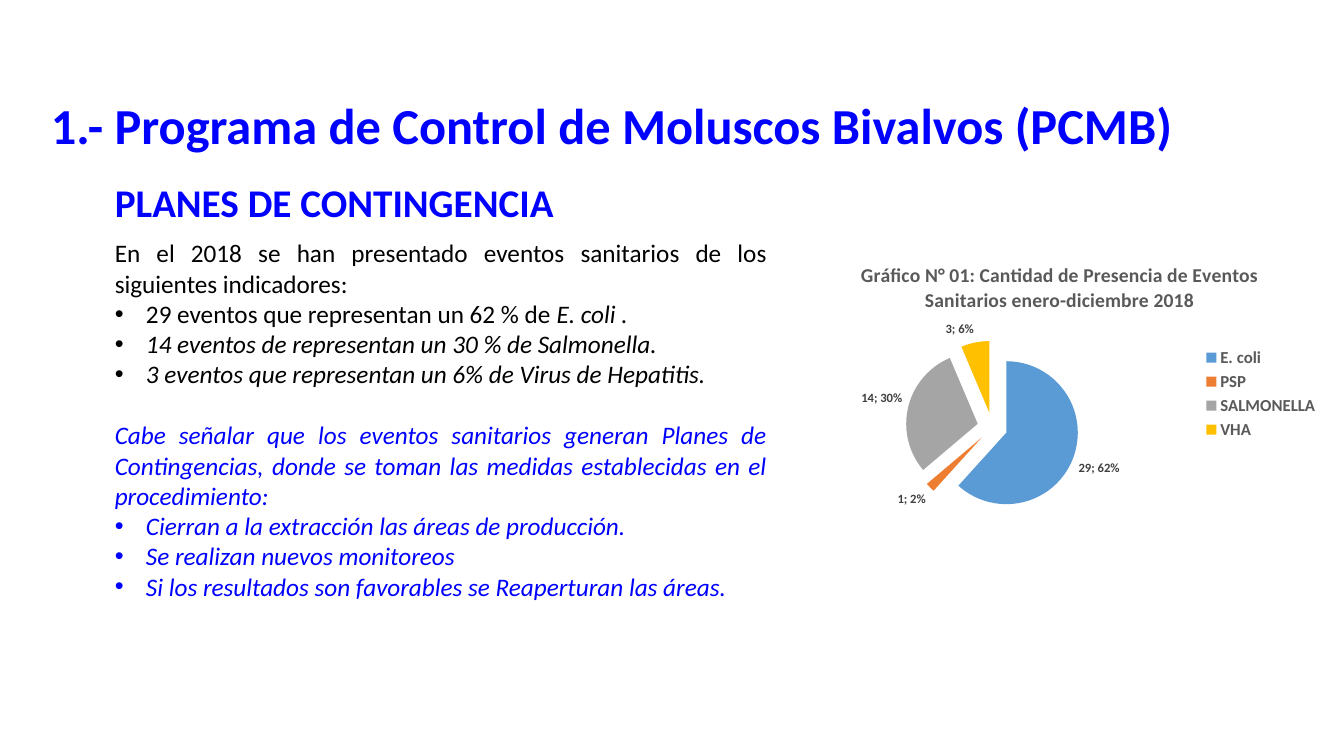
import pptx
import pptx.util
import pptx.dml.color
import pptx.enum.text
import pptx.enum.chart
import pptx.chart.data
import pptx.oxml
from pptx.oxml.ns import qn

Pt = pptx.util.Pt
Inches = pptx.util.Inches
ALIGN = pptx.enum.text.PP_ALIGN
FIT = pptx.enum.text.MSO_AUTO_SIZE
NS = 'xmlns:c="http://schemas.openxmlformats.org/drawingml/2006/chart"'
COLORS = {
    "blue": "0000FF", "black": "000000", "grey": "595959", "label": "404040",
    "pie": ["5B9BD5", "ED7D31", "A5A5A5", "FFC000"],
}


class Deck:
    """Holds the style and the current slide; boxes are percent of its size."""
    face = "Calibri"

    def __init__(self):
        self.prs = pptx.Presentation()
        self.prs.slide_width = Inches(13.33)
        self.prs.slide_height = Inches(7.5)
        self.slide = self.prs.slides.add_slide(self.prs.slide_layouts[1])

    def scale(self, box):
        wide, high = self.prs.slide_width, self.prs.slide_height
        return [int(part * side / 100)
                for part, side in zip(box, (wide, high, wide, high))]

    def style(self, font, size, color, bold=False, slant=False):
        font.name, font.size = self.face, Pt(size)
        font.bold, font.italic = bold, slant
        font.color.rgb = pptx.dml.color.RGBColor.from_string(color)

    def holder(self, idx, box, text, size, align, gap=0):
        shape = self.slide.placeholders[idx]
        shape.left, shape.top, shape.width, shape.height = self.scale(box)
        frame = shape.text_frame
        frame.auto_size = FIT.NONE
        frame.vertical_anchor = pptx.enum.text.MSO_ANCHOR.TOP
        para = frame.paragraphs[0]
        self.mark(para, False)
        para.alignment, para.line_spacing = align, 0.9
        para.space_before = Pt(gap)
        run = para.add_run()
        run.text = text
        self.style(run.font, size, COLORS["blue"], bold=True)

    def mark(self, para, dot):
        props = para._p.get_or_add_pPr()
        inset = Inches(0.31) if dot else 0
        props.set("marL", str(inset))
        props.set("indent", str(-inset))
        kind = props.makeelement(qn("a:buChar" if dot else "a:buNone"), {})
        if dot:
            font = props.makeelement(qn("a:buFont"), {"typeface": "Arial"})
            props.append(font)
            kind.set("char", "•")
        props.append(kind)

    def prose(self, box, paras, size):
        frame = self.slide.shapes.add_textbox(*self.scale(box)).text_frame
        frame.word_wrap = True
        frame.auto_size = FIT.SHAPE_TO_FIT_TEXT
        for i, (dot, gap, color, runs) in enumerate(paras):
            para = frame.add_paragraph() if i else frame.paragraphs[0]
            self.mark(para, dot)
            para.alignment = ALIGN.JUSTIFY
            para.space_before = Pt(gap)
            for text, slant in runs:
                run = para.add_run()
                run.text = text
                self.style(run.font, size, COLORS[color], slant=slant)

    def pie(self, box, title, names, vals, area, burst):
        data = pptx.chart.data.CategoryChartData()
        data.categories = names
        data.add_series("Eventos", vals)
        chart = self.slide.shapes.add_chart(
            pptx.enum.chart.XL_CHART_TYPE.PIE, *self.scale(box), data).chart
        self.style(chart.font, 10, COLORS["black"])

        # Title and legend
        chart.has_title = True
        run = chart.chart_title.text_frame.paragraphs[0].add_run()
        run.text = title
        self.style(run.font, 14, COLORS["grey"], bold=True)
        chart.has_legend = True
        chart.legend.position = pptx.enum.chart.XL_LEGEND_POSITION.RIGHT
        chart.legend.include_in_layout = False
        self.style(chart.legend.font, 12, COLORS["grey"], bold=True)

        # Slices, pulled apart
        plot = chart.plots[0]
        plot.vary_by_categories = True
        series = plot.series[0]
        for i, color in enumerate(COLORS["pie"]):
            fill = series.points[i].format.fill
            fill.solid()
            fill.fore_color.rgb = pptx.dml.color.RGBColor.from_string(color)
        series._element.find(qn("c:dPt")).addprevious(
            pptx.oxml.parse_xml(f'<c:explosion {NS} val="{burst}"/>'))

        # Value and share on each slice
        labels = series.data_labels
        labels.show_value = labels.show_percentage = True
        labels.position = pptx.enum.chart.XL_LABEL_POSITION.OUTSIDE_END
        self.style(labels.font, 9, COLORS["label"], bold=True)
        labels._element.find(qn("c:showBubbleSize")).addnext(
            pptx.oxml.parse_xml(f"<c:separator {NS}>; </c:separator>"))

        # Plot area
        zone = chart._chartSpace.find(".//" + qn("c:plotArea"))
        for old in zone.findall(qn("c:layout")):
            zone.remove(old)
        sides = "".join(f'<c:{key} val="{val}"/>' for key, val in zip(
            ("layoutTarget", "xMode", "yMode", "x", "y", "w", "h"),
            ("inner", "edge", "edge", *area)))
        zone.insert(0, pptx.oxml.parse_xml(
            f"<c:layout {NS}><c:manualLayout>{sides}"
            "</c:manualLayout></c:layout>"))


def main():
    deck = Deck()

    # Headings
    deck.holder(0, (2.4, 12.67, 86.25, 15.6),
                "1.- Programa de Control de Moluscos Bivalvos (PCMB)",
                36, ALIGN.CENTER)
    deck.holder(1, (7.8, 23.6, 86.25, 63.47), "PLANES DE CONTINGENCIA",
                28, ALIGN.LEFT)

    # Findings and measures: bullet, space before, colour, runs
    deck.prose((7.8, 30.8, 50, 49.87), [
        (False, 0, "black", [("En el 2018 se han presentado eventos sanitarios "
                              "de los siguientes indicadores:", False)]),
        (True, 0, "black", [("29 eventos que representan un 62 % de ", False),
                            ("E. coli .", True)]),
        (True, 0, "black",
         [("14 eventos de representan un 30 % de Salmonella.", True)]),
        (True, 0, "black",
         [("3 eventos que representan un 6% de Virus de Hepatitis.", True)]),
        (False, 22, "blue",
         [("Cabe señalar que los eventos sanitarios generan Planes de "
           "Contingencias, donde se toman las medidas establecidas en el "
           "procedimiento:", True)]),
        (True, 0, "blue",
         [("Cierran a la extracción las áreas de producción.", True)]),
        (True, 0, "blue", [("Se realizan nuevos monitoreos", True)]),
        (True, 0, "blue",
         [("Si los resultados son favorables se Reaperturan las áreas.",
           True)]),
    ], 18)

    # Events by cause
    deck.pie((58.8, 32.67, 40.1, 38.8),
             "Gráfico N° 01: Cantidad de Presencia de Eventos Sanitarios "
             "enero-diciembre 2018",
             ["E. coli", "PSP", "SALMONELLA", "VHA"], [29, 1, 14, 3],
             (0.07, 0.32, 0.61, 0.59), 21)

    deck.prs.save("out.pptx")


if __name__ == "__main__":
    main()
